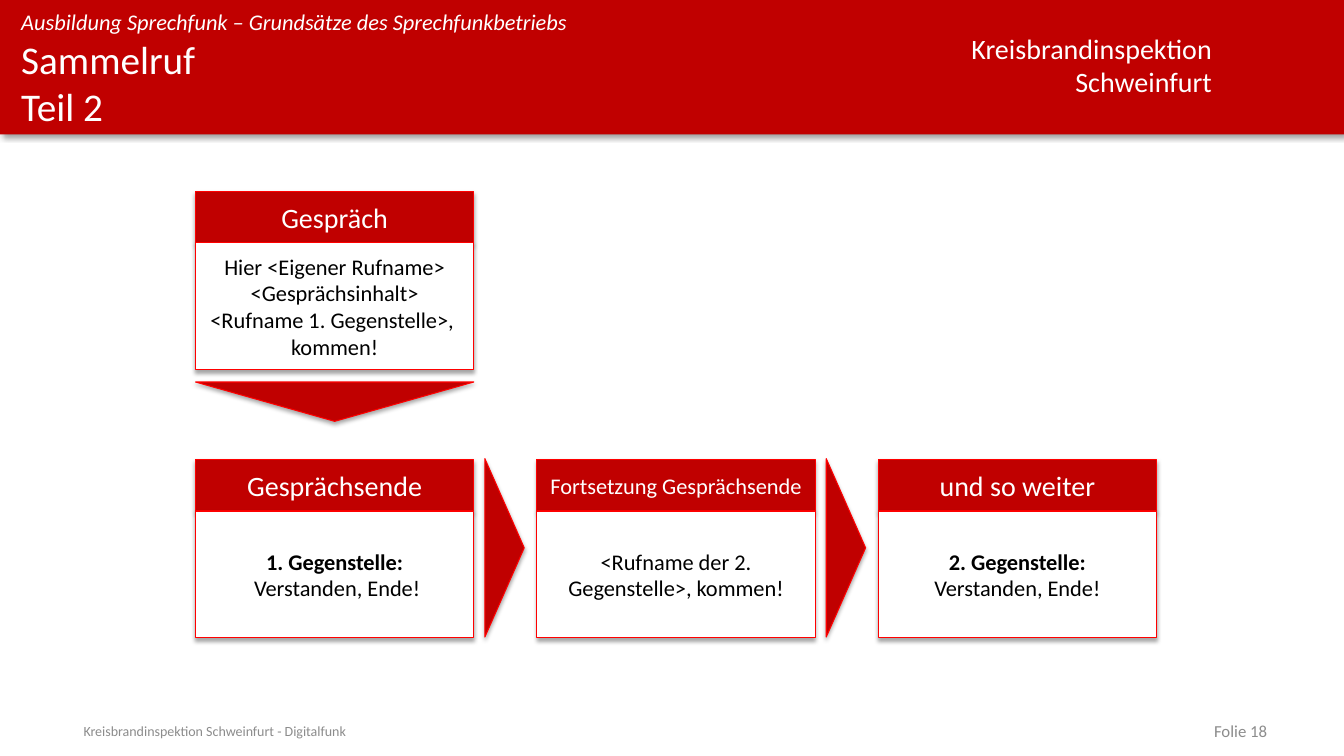
from lxml import etree
from pptx import Presentation, util as u
from pptx.dml.color import RGBColor
from pptx.enum import shapes, text
from pptx.oxml.ns import qn

COLOURS = {"red": "C00000", "edge": "FF0000", "white": "FFFFFF",
           "black": "000000", "grey": "8C8C8C"}
LEFT, RIGHT, CENTRE = text.PP_ALIGN.LEFT, text.PP_ALIGN.RIGHT, text.PP_ALIGN.CENTER
TOP, MIDDLE = text.MSO_ANCHOR.TOP, text.MSO_ANCHOR.MIDDLE
RECTANGLE = shapes.MSO_SHAPE.RECTANGLE
TRIANGLE = shapes.MSO_SHAPE.ISOSCELES_TRIANGLE

# Card grid, in percent of the slide's width and height
GRID_LEFT, COLUMN = 14.55, 25.4
GRID_TOP, ROW = 25.33, 35.47
CARD_WIDTH, HEAD_HEIGHT, BODY_HEIGHT = 20.7, 6.8, 16.8
ARROW_HEIGHT = 5.2


class Slide:
    """Holds the style and the current slide; places are percent of its size."""
    font = "Calibri"

    def __init__(self, deck):
        self.deck = deck
        self.page = deck.slides.add_slide(deck.slide_layouts[6])

    def place(self, left, top, width, height):
        across, down = self.deck.slide_width / 100, self.deck.slide_height / 100
        return [round(left * across), round(top * down),
                round(width * across), round(height * down)]

    def colour(self, name):
        return RGBColor.from_string(COLOURS[name])

    def add_text(self, box, lines, size, colour, align=LEFT, anchor=TOP, italic=False):
        """Each line is a paragraph; a leading "*" marks bold."""
        frame = box.text_frame
        frame.vertical_anchor = anchor
        for index, line in enumerate(lines):
            para = frame.add_paragraph() if index else frame.paragraphs[0]
            para.alignment = align
            for number, part in enumerate(line.split("\n")):
                if number:
                    para.add_line_break()
                span = para.add_run()
                span.text = part.removeprefix("*")
                font = span.font
                font.name, font.size = self.font, u.Pt(size)
                font.bold, font.italic = part.startswith("*"), italic
                font.color.rgb = self.colour(colour)

    def label(self, place, lines, size, colour, wrap=True, margin=True, **style):
        box = self.page.shapes.add_textbox(*self.place(*place))
        frame = box.text_frame
        frame.word_wrap = wrap
        if not margin:
            frame.margin_left = frame.margin_right = 0
            frame.margin_top = frame.margin_bottom = 0
        self.add_text(box, lines, size, colour, **style)

    def shape(self, kind, place, fill="red", edge="edge", turn=0,
              shadow=(3.1, 1.8, 90, 35)):
        box = self.page.shapes.add_shape(kind, *self.place(*place))
        box.rotation = turn
        box.fill.solid()
        box.fill.fore_color.rgb = self.colour(fill)
        if edge:
            box.line.color.rgb = self.colour(edge)
            box.line.width = u.Pt(0.75)
        else:
            box.line.fill.background()
        self.cast_shadow(box, *shadow)
        return box

    def cast_shadow(self, box, blur, distance, angle, opacity):
        box.shadow.inherit = False
        effects = box.element.spPr.find(qn("a:effectLst"))
        outer = etree.SubElement(effects, qn("a:outerShdw"), {
            "blurRad": str(u.Pt(blur)), "dist": str(u.Pt(distance)),
            "dir": str(angle * 60000), "rotWithShape": "0"})
        tint = etree.SubElement(outer, qn("a:srgbClr"), val=COLOURS["black"])
        etree.SubElement(tint, qn("a:alpha"), val=str(opacity * 1000))

    def card(self, column, row, heading, lines, heading_size=20):
        left, top = GRID_LEFT + column * COLUMN, GRID_TOP + row * ROW
        head = self.shape(RECTANGLE, (left, top, CARD_WIDTH, HEAD_HEIGHT))
        self.add_text(head, [heading], heading_size, "white", CENTRE, MIDDLE)
        body = self.shape(RECTANGLE, (left, top + HEAD_HEIGHT, CARD_WIDTH, BODY_HEIGHT),
                          fill="white")
        self.add_text(body, lines, 16, "black", CENTRE, MIDDLE)


def main():
    deck = Presentation()
    deck.slide_width, deck.slide_height = u.Inches(13.33), u.Inches(7.5)
    slide = Slide(deck)

    # Banner
    slide.shape(RECTANGLE, (0, 0, 100, 17.78), edge=None, shadow=(4, 3, 45, 40))
    slide.label((71.33, 3.47, 19.58, 10.27), ["Kreisbrandinspektion", "Schweinfurt"],
                20, "white", wrap=False, align=RIGHT)
    slide.label((1.58, 1.07, 63.23, 3.6),
                ["Ausbildung Sprechfunk – Grundsätze des Sprechfunkbetriebs"],
                16, "white", margin=False, italic=True)
    slide.label((1.58, 4.67, 63.23, 13.2), ["Sammelruf\nTeil 2"], 28, "white",
                margin=False)

    # Footer
    slide.label((5.48, 95.33, 60.38, 2.67),
                ["Kreisbrandinspektion Schweinfurt - Digitalfunk"], 10, "grey",
                anchor=MIDDLE)
    slide.label((71.7, 95.33, 23.33, 2.67), ["Folie 18"], 12, "grey",
                align=RIGHT, anchor=MIDDLE)

    # Call sequence
    slide.card(0, 0, "Gespräch", ["Hier <Eigener Rufname>", "<Gesprächsinhalt>",
                                  "<Rufname 1. Gegenstelle>, ", "kommen!"])
    slide.card(0, 1, "Gesprächsende", ["*1. Gegenstelle:", " Verstanden, Ende!"])
    slide.card(1, 1, "Fortsetzung Gesprächsende",
               ["<Rufname der 2. Gegenstelle>, kommen!"], heading_size=16)
    slide.card(2, 1, "und so weiter", ["*2. Gegenstelle:", "Verstanden, Ende!"])

    # Arrows: one down, then one between each pair of cards
    slide.shape(TRIANGLE, (GRID_LEFT, 50.53, CARD_WIDTH, ARROW_HEIGHT), turn=180)
    for column in range(2):
        slide.shape(TRIANGLE, (30.9 + column * COLUMN, 69.87, 13.28, ARROW_HEIGHT),
                    turn=90)

    deck.save("out.pptx")


if __name__ == "__main__":
    main()
